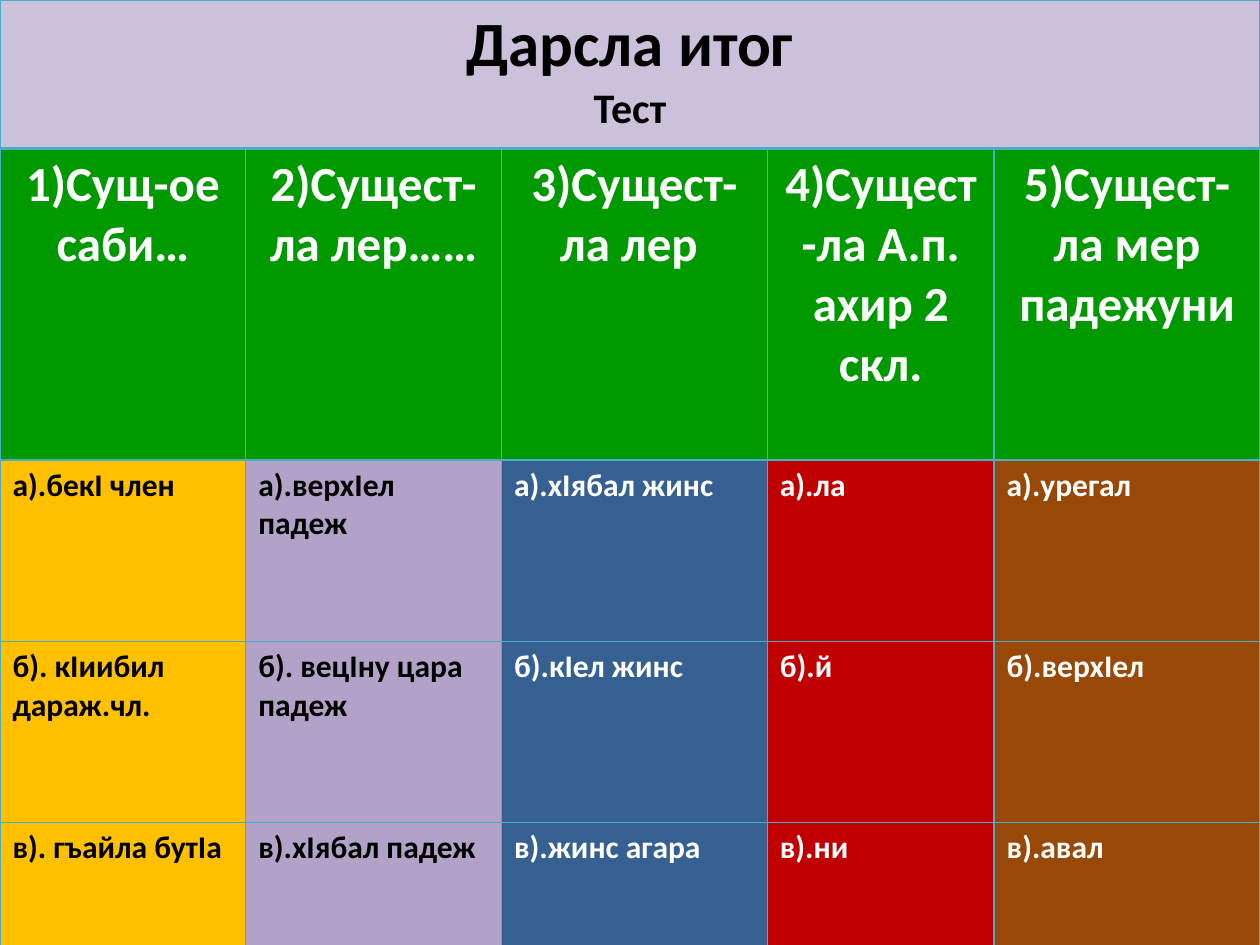
from lxml.etree import SubElement
from pptx import Presentation
from pptx.dml.color import RGBColor
from pptx.enum.text import PP_ALIGN as Align
from pptx.oxml.ns import qn
from pptx.util import Inches, Pt

COLORS = {
    "black": "000000", "white": "FFFFFF", "border": "4BACC6",
    "title": "CCC1DA", "question": "009900",
    "yellow": "FFC000", "violet": "B3A2C7", "blue": "376092",
    "red": "C00000", "brown": "984807",
}
COLUMN_WIDTHS = [1.95, 2.03, 2.11, 1.8, 2.11]
ROW_HEIGHTS = [1.18, 2.47, 1.44, 1.44, 1.44]
TITLE_LINES = [("Дарсла итог", 36), ("Тест", 24)]
QUESTIONS = [
    "1)Сущ-ое саби…", "2)Сущест-ла лер……", "3)Сущест-ла лер ",
    "4)Сущест-ла А.п. ахир 2 скл.", "5)Сущест-ла мер падежуни",
]
ANSWERS = [
    ["а).бекI член", "а).верхIел падеж", "а).хIябал жинс", "а).ла", "а).урегал"],
    ["б). кIиибил дараж.чл.", "б). вецIну цара падеж", "б).кIел жинс", "б).й", "б).верхIел"],
    ["в). гъайла бутIа", "в).хIябал падеж", "в).жинс агара", "в).ни", "в).авал"],
]
ANSWER_STYLES = [
    ("yellow", "black"), ("violet", "black"),
    ("blue", "white"), ("red", "white"), ("brown", "white"),
]


class TestSlide:
    def __init__(self, slide, font_name="Calibri"):
        self.slide = slide
        self.font_name = font_name

    def add_table(self, column_widths, row_heights):
        frame = self.slide.shapes.add_table(
            len(row_heights), len(column_widths), 0, 0,
            Inches(sum(column_widths)), Inches(sum(row_heights)))
        table = frame.table
        table.first_row = table.horz_banding = False
        for column, width in zip(table.columns, column_widths):
            column.width = Inches(width)
        for row, height in zip(table.rows, row_heights):
            row.height = Inches(height)
        return table

    def style_cell(self, cell, fill, top=1, bottom=1):
        """Draw the four borders (widths in points), then the fill."""
        properties = cell._tc.get_or_add_tcPr()
        for side, width in (("L", 1), ("R", 1), ("T", top), ("B", bottom)):
            line = SubElement(properties, qn(f"a:ln{side}"), w=str(Pt(width)))
            line_fill = SubElement(line, qn("a:solidFill"))
            SubElement(line_fill, qn("a:srgbClr"), val=COLORS["border"])
        cell.fill.solid()
        cell.fill.fore_color.rgb = RGBColor.from_string(COLORS[fill])

    def add_text(self, cell, lines, color, align=Align.LEFT):
        """Put (text, size) lines into one paragraph, split by line breaks."""
        paragraph = cell.text_frame.paragraphs[0]
        paragraph.alignment = align
        paragraph.font.name = self.font_name
        paragraph.font.bold = True
        paragraph.font.color.rgb = RGBColor.from_string(COLORS[color])
        for index, (text, size) in enumerate(lines):
            if index:
                paragraph.add_line_break()
            run = paragraph.add_run()
            run.text = text
            run.font.size = Pt(size)


def main():
    presentation = Presentation()
    presentation.slide_width, presentation.slide_height = Inches(10), Inches(7.5)
    test = TestSlide(presentation.slides.add_slide(presentation.slide_layouts[6]))
    table = test.add_table(COLUMN_WIDTHS, ROW_HEIGHTS)

    title = table.cell(0, 0)
    title.merge(table.cell(0, len(COLUMN_WIDTHS) - 1))
    test.add_text(title, TITLE_LINES, "black", Align.CENTER)

    for column, question in enumerate(QUESTIONS):
        test.style_cell(table.cell(0, column), "title", bottom=2)
        cell = table.cell(1, column)
        test.style_cell(cell, "question", top=2)
        test.add_text(cell, [(question, 28)], "white", Align.CENTER)

    for row, answers in enumerate(ANSWERS, start=2):
        for column, (answer, (fill, color)) in enumerate(zip(answers, ANSWER_STYLES)):
            cell = table.cell(row, column)
            test.style_cell(cell, fill)
            test.add_text(cell, [(answer, 18)], color)

    presentation.save("out.pptx")


if __name__ == "__main__":
    main()
